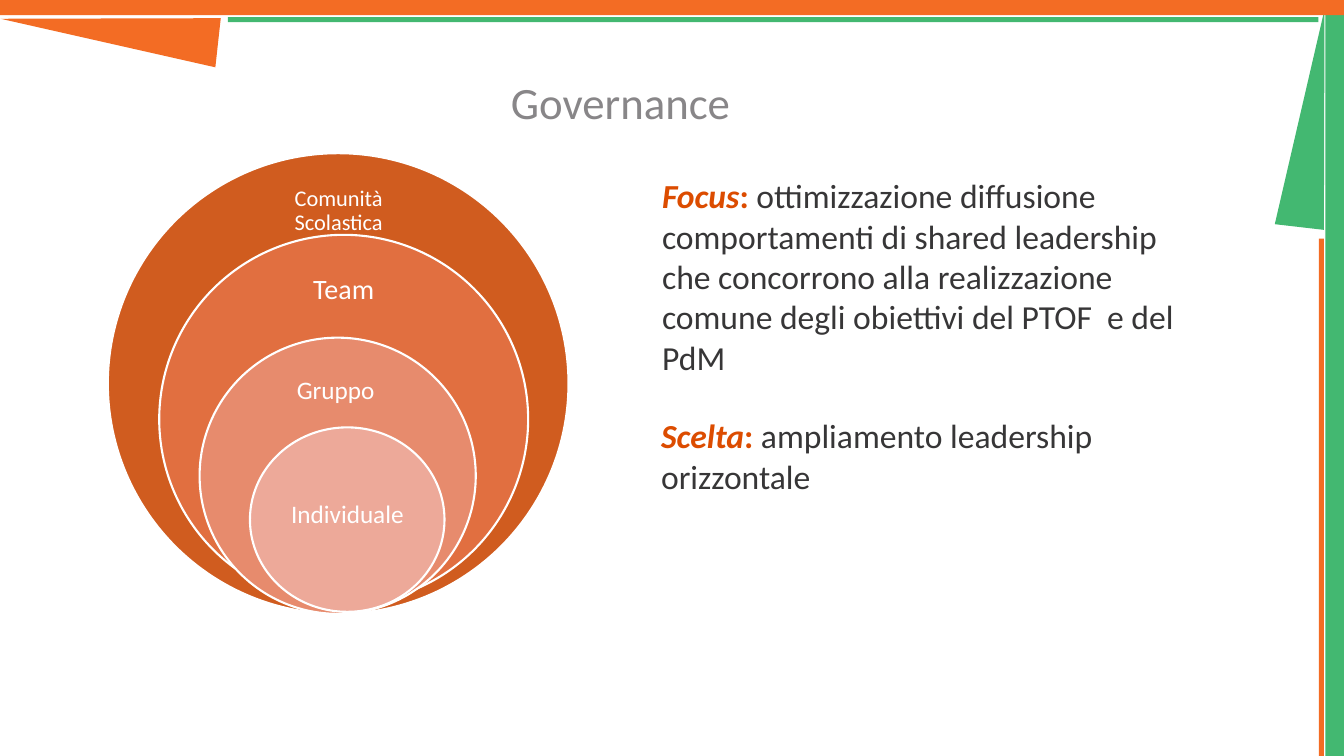
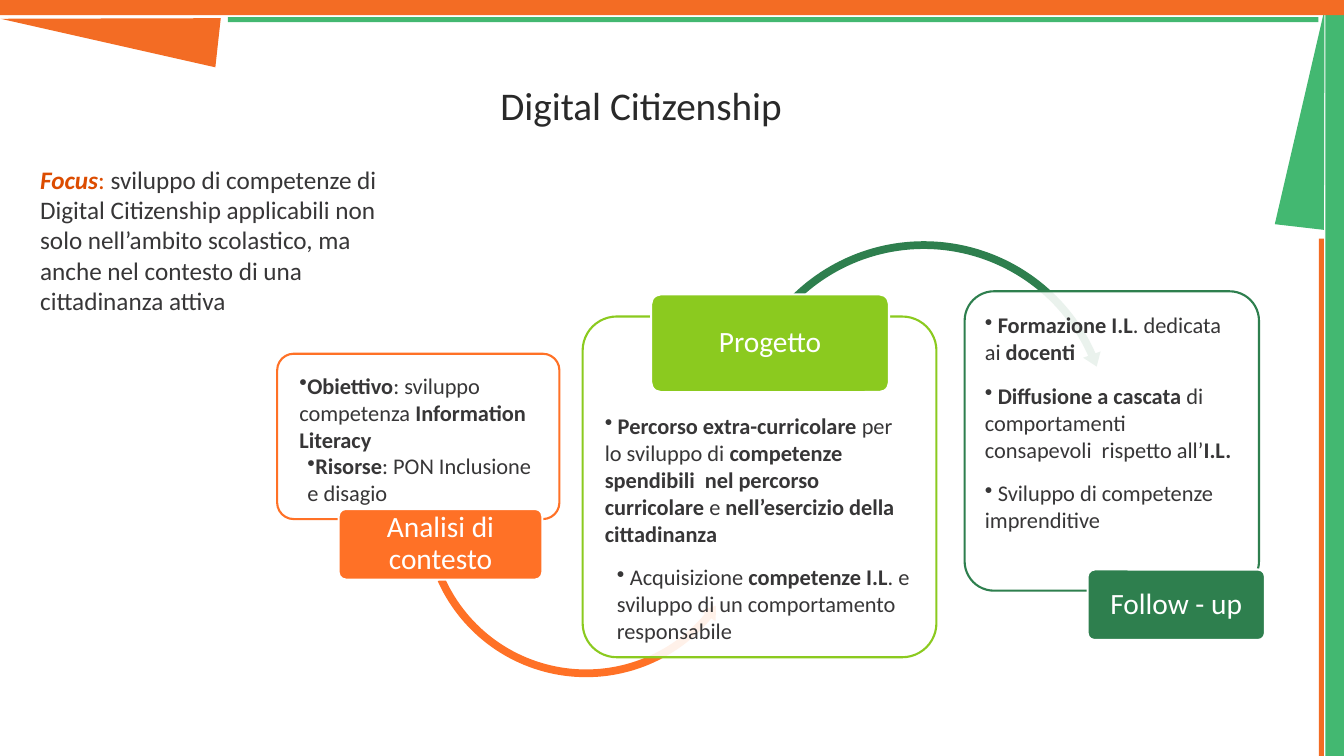
import pptx
import pptx.util
import pptx.dml.color
import pptx.enum.shapes
import pptx.enum.text
import pptx.oxml
import pptx.oxml.ns
import lxml.etree

WIDE, HIGH = pptx.util.Inches(13.333), pptx.util.Inches(7.5)
COLS, ROWS = 160, 90
FONT = "Calibri"
HUES = {
    "orange": "F36C24", "green": "43B871", "white": "FFFFFF",
    "ink": "373637", "dark": "292929", "gray": "888688", "rust": "DC4C00",
    "ring1": "D05C1F", "ring2": "E16F40", "ring3": "E78B6D", "ring4": "EDA999",
    "flame": "FF7126", "lime": "8BCA1F", "forest": "2E7F4E",
}
KIND = pptx.enum.shapes.MSO_SHAPE
LEFT, MID = pptx.enum.text.PP_ALIGN.LEFT, pptx.enum.text.PP_ALIGN.CENTER
TOP, HALF = pptx.enum.text.MSO_ANCHOR.TOP, pptx.enum.text.MSO_ANCHOR.MIDDLE


def place(box):
    left, top, width, height = box
    return (int(WIDE * left / COLS), int(HIGH * top / ROWS),
            int(WIDE * width / COLS), int(HIGH * height / ROWS))


def tint(name):
    return pptx.dml.color.RGBColor.from_string(HUES[name])


def shape(slide, kind, box, fill, line=None, turn=0, alpha=None):
    item = slide.shapes.add_shape(kind, *place(box))
    item.shadow.inherit = False
    item.rotation = turn
    item.fill.solid()
    item.fill.fore_color.rgb = tint(fill)
    if alpha:
        hue = item.element.xpath("./p:spPr/a:solidFill/a:srgbClr")[0]
        tag = pptx.oxml.ns.qn("a:alpha")
        lxml.etree.SubElement(hue, tag).set("val", str(alpha * 1000))
    if line:
        item.line.color.rgb = tint(line)
        item.line.width = pptx.util.Pt(1.5)
    else:
        item.line.fill.background()
    return item


def bullet(para, indent):
    props = para._p.get_or_add_pPr()
    props.set("marL", str(pptx.util.Inches(indent)))
    props.set("indent", "0")
    tag = pptx.oxml.ns.qn("a:buChar")
    lxml.etree.SubElement(props, tag).set("char", "•")


def write(para, parts, size, align=LEFT, space=None):
    para.text = parts[0][0]
    for words, *_ in parts[1:]:
        para.add_run().text = words
    para.alignment = align
    if space:
        para.line_spacing = space
    for run, (_, hue, marks) in zip(para.runs, parts):
        run.font.name = FONT
        run.font.size = pptx.util.Pt(size)
        run.font.color.rgb = tint(hue)
        run.font.bold = "b" in marks
        run.font.italic = "i" in marks


def inset(frame, side, edge):
    frame.word_wrap = True
    frame.margin_left = frame.margin_right = pptx.util.Inches(side)
    frame.margin_top = frame.margin_bottom = pptx.util.Inches(edge)


def text(slide, box, side=0.1, edge=0.05, anchor=TOP):
    frame = slide.shapes.add_textbox(*place(box)).text_frame
    inset(frame, side, edge)
    frame.vertical_anchor = anchor
    return frame


def label(slide, box, words, size, hue, align=LEFT):
    write(text(slide, box).paragraphs[0], [(words, hue, "")], size, align)


def badge(slide, box, words, size, pad):
    frame = text(slide, box, pad, pad, HALF)
    write(frame.paragraphs[0], [(words, "white", "")], size, MID, 0.9)


def lead(slide, box, head, body, size, marks):
    parts = [(head, "rust", "bi"), (":", "rust", marks), (body, "ink", "")]
    write(text(slide, box).paragraphs[0], parts, size)


def rich(words):
    bits = enumerate(words.split("*"))
    return [(bit, "ink", "b" if i % 2 else "") for i, bit in bits if bit]


def list_box(slide, box, items, gap):
    frame = text(slide, box, 0.14, 0.14)
    for i, (words, indent) in enumerate(items):
        para = frame.add_paragraph() if i else frame.paragraphs[0]
        bullet(para, indent)
        write(para, rich(words), 16)
        if i and gap:
            para.space_before = pptx.util.Pt(gap)


def card(slide, box, hue, body, items, gap):
    item = shape(slide, KIND.ROUNDED_RECTANGLE, box, "white", hue, alpha=90)
    item.adjustments[0] = 0.1
    list_box(slide, body, items, gap)


def tag(slide, box, hue, words):
    item = shape(slide, KIND.ROUNDED_RECTANGLE, box, hue, "white")
    item.adjustments[0] = 0.1
    inset(item.text_frame, 0.04, 0.03)
    item.text_frame.vertical_anchor = HALF
    write(item.text_frame.paragraphs[0], [(words, "white", "")], 21, MID, 0.9)


def arrow(slide, kind, left, top, side, hue, band, turns, head, turn=0):
    item = shape(slide, kind, (left, top, side, side), hue, turn=turn)
    rates = [band / 100, *(angle * 0.6 for angle in turns), head / 100]
    for i, rate in enumerate(rates):
        item.adjustments[i] = rate


def trim(slide):
    for kind, box, hue, turn in (
        (KIND.RECTANGLE, (157.8, 0, 2.2, 90), "green", 0),
        (KIND.ISOSCELES_TRIANGLE, (153.24, 1.08, 5.88, 26.04), "green", 6.6),
        (KIND.ISOSCELES_TRIANGLE, (10.08, -9.36, 5.88, 26.04), "orange", 276.3),
        (KIND.RECTANGLE, (0, 0, 160, 1.8), "orange", 0),
        (KIND.RECTANGLE, (27.12, 2.04, 129.84, 0.6), "green", 0),
        (KIND.RECTANGLE, (157, 28.4, 0.6, 61.6), "orange", 0),
    ):
        shape(slide, kind, box, hue, turn=turn)


def start(deck):
    slide = deck.slides.add_slide(deck.slide_layouts[6])
    trim(slide)
    return slide


def govern(deck):
    slide = start(deck)
    label(slide, (59.64, 8.28, 36.24, 7.68), "Governance", 32, "gray")
    lead(slide, (77.64, 20.28, 66.48, 20.64), "Focus",
         " ottimizzazione diffusione comportamenti di shared leadership che "
         "concorrono alla realizzazione comune degli obiettivi del PTOF  e del PdM",
         24, "b")
    lead(slide, (77.52, 48.84, 66.48, 10.92), "Scelta",
         " ampliamento leadership orizzontale", 24, "b")
    for hue, box in (
        ("ring1", (12.84, 18.24, 54.84, 54.84)),
        ("ring2", (18.96, 27.96, 43.92, 43.92)),
        ("ring3", (23.76, 40.2, 32.88, 32.88)),
        ("ring4", (29.76, 50.88, 23.16, 21.96)),
    ):
        shape(slide, KIND.OVAL, box, hue, "white")
    badge(slide, (32.64, 21, 15.36, 8.28), "Comunità Scolastica", 16, 0.12)
    badge(slide, (33.24, 30.6, 15.36, 7.92), "Team", 20, 0.16)
    label(slide, (34.16, 43.92, 15.24, 4.8), "Gruppo", 18, "white")
    label(slide, (33.48, 58.68, 18.24, 4.8), "Individuale", 18, "white")


def digital(deck):
    slide = start(deck)
    label(slide, (34.32, 9.12, 84, 6.84), "Digital Citizenship", 28, "dark", MID)
    card(slide, (33, 42.12, 33.6, 19.68), "flame", (33.48, 42.6, 32.64, 14.52), [
        ("*Obiettivo*: sviluppo  competenza *Information Literacy*", 0.04),
        ("*Risorse*: PON Inclusione e disagio", 0.12),
    ], 0)
    arrow(slide, KIND.LEFT_CIRCULAR_ARROW, 49.8, 41.28, 39.96, "flame",
          2.3, (4.67, 39.75, 155.9), 2.7)
    tag(slide, (40.32, 60.6, 24.24, 8.4), "flame", "Analisi di contesto")
    card(slide, (69.36, 37.68, 42.12, 40.56), "lime", (70.32, 47.4, 40.2, 30), [
        (" *Percorso extra-curricolare *per lo sviluppo di *competenze spendibili"
         "  nel percorso curricolare* e *nell’esercizio della cittadinanza*", 0),
        (" Acquisizione *competenze I.L*. e sviluppo di un comportamento "
         "responsabile", 0.12),
    ], 12)
    arrow(slide, KIND.CIRCULAR_ARROW, 87, 28.08, 45.96, "forest",
          2, (4.03, 331.36, 214.57), 2.4, 4.8)
    tag(slide, (77.52, 35.04, 28.32, 11.64), "lime", "Progetto")
    card(slide, (114.84, 34.68, 35.04, 35.64), "forest",
         (115.56, 35.4, 33.36, 26.4), [
        (" *Formazione I.L*. dedicata ai *docenti*", 0),
        (" *Diffusione a cascata *di  comportamenti consapevoli  rispetto "
         "all’*I.L.*", 0),
        (" Sviluppo di competenze imprenditive", 0),
    ], 12)
    tag(slide, (129.48, 67.8, 21.12, 8.4), "forest", "Follow - up")
    lead(slide, (3.6, 18.96, 44.04, 23.04), "Focus",
         " sviluppo di competenze di Digital Citizenship applicabili non solo "
         "nell’ambito scolastico, ma anche nel contesto di una cittadinanza attiva",
         18, "")


def main():
    deck = pptx.Presentation()
    deck.slide_width, deck.slide_height = WIDE, HIGH
    govern(deck)
    digital(deck)
    deck.save("out.pptx")


if __name__ == "__main__":
    main()
